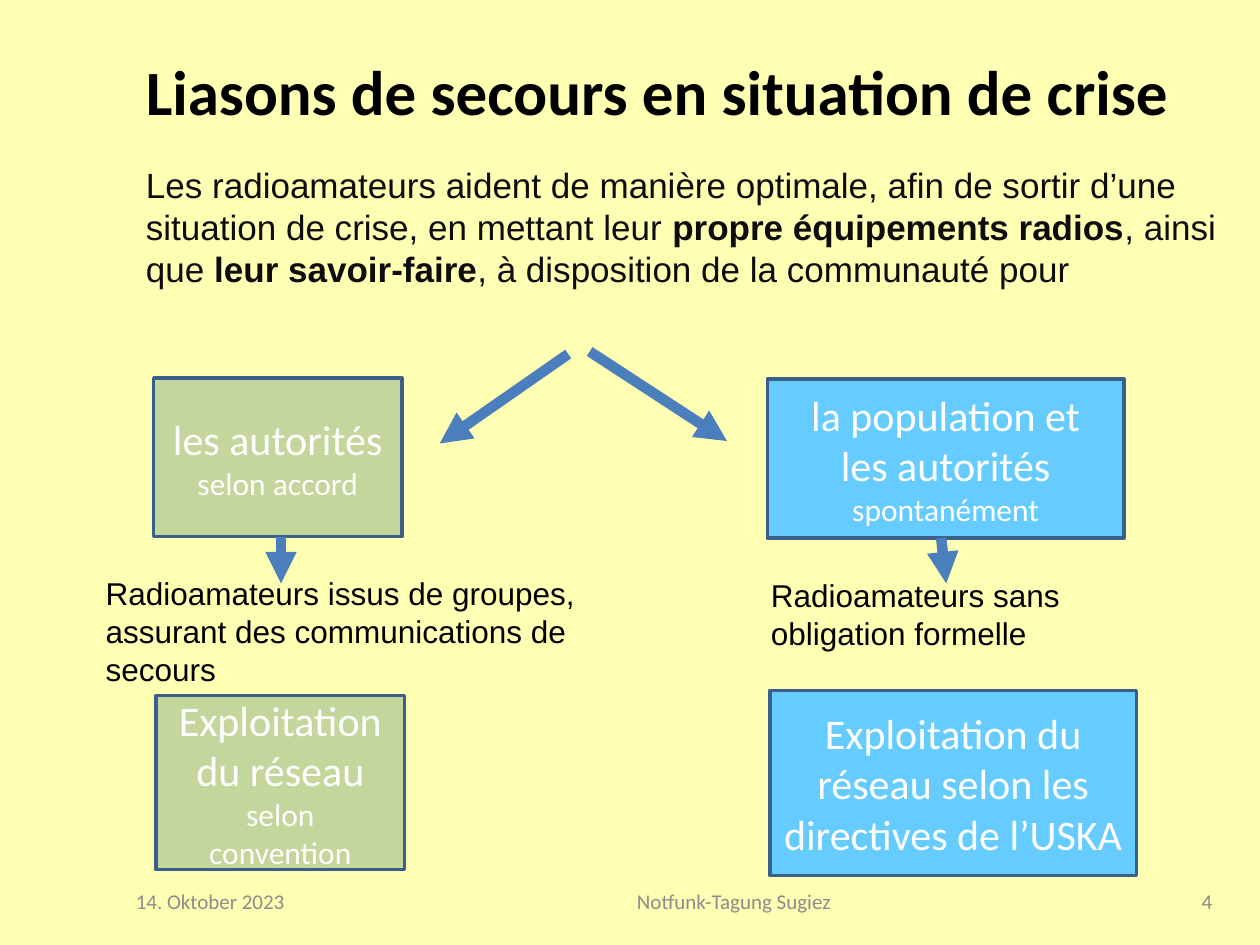
import pptx
import pptx.util
import pptx.dml.color
import pptx.enum.shapes
import pptx.enum.text
import pptx.oxml.ns
from lxml import etree
from pptx.util import Inches

THEME = {
    "bg": "FFFFB3", "black": "000000", "body": "0D0D0D", "white": "FFFFFF",
    "grey": "8C8C8C", "green": "C3D69B", "blue": "66CCFF",
    "border": "3A5F8C", "arrow": "4B7EBC",
    "title_pt": 36, "box_pt": 24, "body_pt": 20, "note_pt": 18, "footer_pt": 12,
}
ALIGN = pptx.enum.text.PP_ALIGN
ANCHOR = pptx.enum.text.MSO_ANCHOR


def rgb(name):
    return pptx.dml.color.RGBColor.from_string(THEME[name])


def write(sp, paragraphs, color, font="Calibri", align=ALIGN.LEFT, anchor=ANCHOR.MIDDLE):
    """Each paragraph is a list of (text, size, bold) runs; a newline is a line break."""
    tf = sp.text_frame
    for key, value in {"word_wrap": True, "vertical_anchor": anchor}.items():
        setattr(tf, key, value)
    for i, runs in enumerate(paragraphs):
        p = tf.add_paragraph() if i else tf.paragraphs[0]
        p.alignment = align
        for text, size, bold in runs:
            for j, line in enumerate(text.split("\n")):
                if j:
                    p.add_line_break()
                r = p.add_run()
                r.text = line
                fmt = {"name": font, "size": pptx.util.Pt(THEME[size]), "bold": bold}
                for key, value in fmt.items():
                    setattr(r.font, key, value)
                r.font.color.rgb = rgb(color)


prs = pptx.Presentation()
prs.slide_width, prs.slide_height = Inches(10), Inches(7.5)
s = prs.slides.add_slide(prs.slide_layouts[6])
s.background.fill.solid()
s.background.fill.fore_color.rgb = rgb("bg")

# Title
sp = s.shapes.add_textbox(Inches(1.06), Inches(0.19), Inches(8.66), Inches(1.06))
write(sp, [[("Liasons de secours en situation de crise", "title_pt", True)]], "black")

# Introduction and notes between the boxes
intro = [
    ("Les radioamateurs aident de manière optimale, afin de sortir d’une situation "
     "de crise, en mettant leur ", "body_pt", False),
    ("propre équipements radios", "body_pt", True),
    (", ainsi que ", "body_pt", False),
    ("leur savoir-faire", "body_pt", True),
    (", à disposition de la communauté pour", "body_pt", False),
]
groups = [("Radioamateurs issus de groupes, assurant des communications de secours",
           "note_pt", False)]
informal = [("Radioamateurs sans\nobligation formelle", "note_pt", False)]
for at, runs, color in [
    ((1.06, 1.25, 8.82, 1.11), intro, "body"),
    ((0.74, 4.51, 4.19, 1.01), groups, "black"),
    ((6.02, 4.52, 3.13, 0.71), informal, "black"),
]:
    sp = s.shapes.add_textbox(*map(Inches, at))
    write(sp, [runs], color, font="Arial", anchor=ANCHOR.TOP)

# Boxes: main text, then an optional smaller line
for at, fill, main, sub in [
    ((1.22, 3, 1.97, 1.26), "green", "les autorités", "selon accord"),
    ((6.09, 3.01, 2.83, 1.26), "blue", "la population et\nles autorités", "spontanément"),
    ((1.24, 5.52, 1.97, 1.38), "green", "Exploitation du réseau", "selon\nconvention"),
    ((6.11, 5.48, 2.91, 1.47), "blue",
     "Exploitation du réseau selon les directives de l’USKA", None),
]:
    sp = s.shapes.add_shape(pptx.enum.shapes.MSO_SHAPE.RECTANGLE, *map(Inches, at))
    sp.shadow.inherit = False
    sp.fill.solid()
    sp.fill.fore_color.rgb = rgb(fill)
    sp.line.color.rgb = rgb("border")
    sp.line.width = pptx.util.Pt(2)
    paragraphs = [[(main, "box_pt", False)]]
    if sub:
        paragraphs.append([(sub, "note_pt", False)])
    write(sp, paragraphs, "white", align=ALIGN.CENTER)

# Arrows
for ends in [
    (4.51, 2.81, 3.49, 3.52),
    (4.68, 2.79, 5.77, 3.5),
    (2.23, 4.26, 2.23, 4.63),
    (7.47, 4.27, 7.51, 4.63),
]:
    sp = s.shapes.add_connector(pptx.enum.shapes.MSO_CONNECTOR.STRAIGHT, *map(Inches, ends))
    sp.line.color.rgb = rgb("arrow")
    sp.line.width = pptx.util.Pt(6)
    qn = pptx.oxml.ns.qn
    etree.SubElement(sp.line._get_or_add_ln(), qn("a:tailEnd"), type="triangle")
    etree.SubElement(sp._element.spPr, qn("a:effectLst"))

# Footer
for left, width, text, align in [
    (0.98, 1.85, "14. Oktober 2023", ALIGN.LEFT),
    (3.11, 5.43, "Notfunk-Tagung Sugiez", ALIGN.CENTER),
    (8.78, 0.94, "4", ALIGN.RIGHT),
]:
    sp = s.shapes.add_textbox(Inches(left), Inches(6.95), Inches(width), Inches(0.4))
    write(sp, [[(text, "footer_pt", False)]], "grey", align=align)

prs.save("out.pptx")
